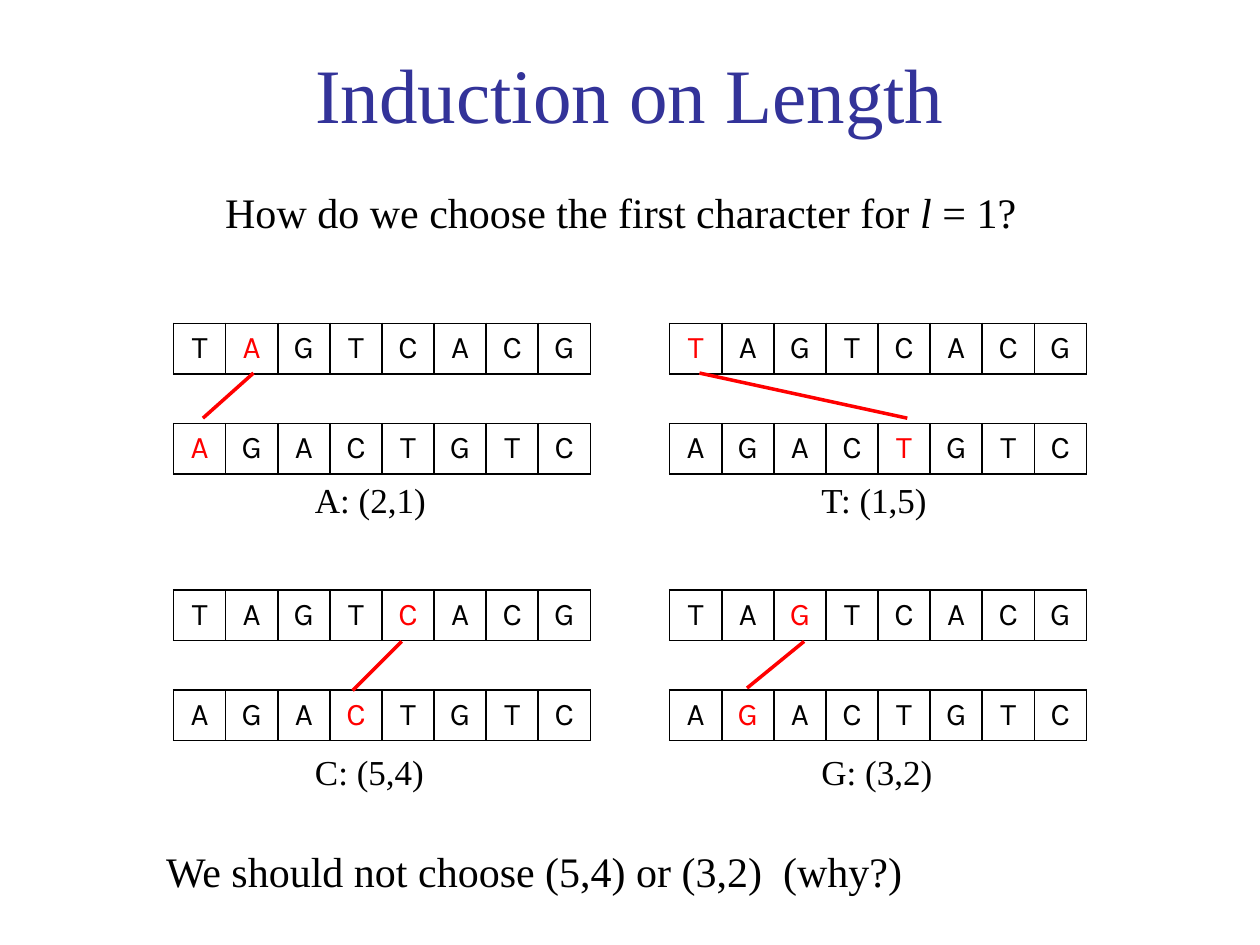
from lxml import etree
from pptx import Presentation
from pptx import util as u
from pptx.dml.color import RGBColor
from pptx.enum import shapes, text
from pptx.oxml import ns

COLORS = {"title": "333399", "ink": "000000", "mark": "FF0000"}
TOP_SEQ, BOTTOM_SEQ = "TAGTCACG", "AGACTGTC"
CELL_W, CELL_H, ROW_STEP = 1.05, 1.02, 2.02


class Deck:
    serif, mono = "Times New Roman", "Karla"

    def __init__(self, width, height):
        self.prs = Presentation()
        self.prs.slide_width, self.prs.slide_height = u.Cm(width), u.Cm(height)
        self.s = self.prs.slides.add_slide(self.prs.slide_layouts[6])

    def run(self, p, words, size, color="ink", font=serif, italic=False):
        r = p.add_run()
        r.text = words
        r.font.name, r.font.size, r.font.italic = font, u.Pt(size), italic
        r.font.color.rgb = RGBColor.from_string(COLORS[color])

    def text(self, x, y, w, h, runs, size, color="ink", align=text.PP_ALIGN.LEFT,
             anchor=text.MSO_ANCHOR.TOP):
        sp = self.s.shapes.add_textbox(u.Cm(x), u.Cm(y), u.Cm(w), u.Cm(h))
        tf = sp.text_frame
        tf.word_wrap, tf.vertical_anchor = True, anchor
        p = tf.paragraphs[0]
        p.alignment = align
        for words, italic in runs:
            self.run(p, words, size, color, italic=italic)

    def border(self, cell):
        pr = cell._tc.get_or_add_tcPr()
        for i, side in enumerate(("lnL", "lnR", "lnT", "lnB")):
            ln = etree.Element(ns.qn("a:" + side), w=str(u.Pt(1)))
            fill = etree.SubElement(ln, ns.qn("a:solidFill"))
            etree.SubElement(fill, ns.qn("a:srgbClr"), val=COLORS["ink"])
            pr.insert(i, ln)

    def sequence(self, x, y, letters, marked):
        """One-row table with the letter at the 1-based position marked."""
        n = len(letters)
        tbl = self.s.shapes.add_table(1, n, u.Cm(x), u.Cm(y), u.Cm(n * CELL_W),
                                      u.Cm(CELL_H)).table
        tbl.first_row = tbl.horz_banding = False
        for i, letter in enumerate(letters):
            tbl.columns[i].width = u.Cm(CELL_W)
            cell = tbl.cell(0, i)
            cell.fill.background()
            self.border(cell)
            p = cell.text_frame.paragraphs[0]
            p.alignment = text.PP_ALIGN.CENTER
            color = "mark" if i + 1 == marked else "ink"
            self.run(p, letter, 18, color, self.mono)

    def line(self, x1, y1, x2, y2):
        c = self.s.shapes.add_connector(shapes.MSO_CONNECTOR.STRAIGHT,
                                        u.Cm(x1), u.Cm(y1), u.Cm(x2), u.Cm(y2))
        c.line.color.rgb = RGBColor.from_string(COLORS["mark"])
        c.line.width = u.Pt(2)
        etree.SubElement(c._element.spPr, ns.qn("a:effectLst"))


def main():
    deck = Deck(25.4, 19.05)

    # Title and question
    deck.text(2.11, 0.79, 21.17, 2.13, [("Induction on Length", False)], 44, "title",
              text.PP_ALIGN.CENTER, text.MSO_ANCHOR.BOTTOM)
    deck.text(4.29, 3.63, 16.61, 1.3,
              [("How do we choose the first character for ", False),
               ("l ", True), ("= 1?", False)], 24)

    # Four matches: left, top, caption left and top, matched positions, link
    matches = [
        (3.5, 6.52, 6.1, 9.53, 2, 1, (5.11, 7.52, 4.09, 8.43)),
        (13.5, 6.52, 16.31, 9.53, 1, 5, (14.1, 7.52, 18.29, 8.43)),
        (3.5, 11.89, 6.1, 15.01, 5, 4, (8.1, 12.93, 7.11, 13.92)),
        (13.5, 11.89, 16.31, 15.01, 3, 2, (16.21, 12.93, 15.06, 13.87)),
    ]
    for x, y, cap_x, cap_y, i, j, link in matches:
        deck.sequence(x, y, TOP_SEQ, i)
        deck.sequence(x, y + ROW_STEP, BOTTOM_SEQ, j)
        deck.line(*link)
        caption = f"{TOP_SEQ[i - 1]}: ({i},{j})"
        deck.text(cap_x, cap_y, 2.8, 1.12, [(caption, False)], 20)

    # Conclusion
    deck.text(3.1, 16.92, 15.8, 1.3,
              [("We should not choose (5,4) or (3,2)  (why?)", False)], 24)

    deck.prs.save("out.pptx")


if __name__ == "__main__":
    main()
